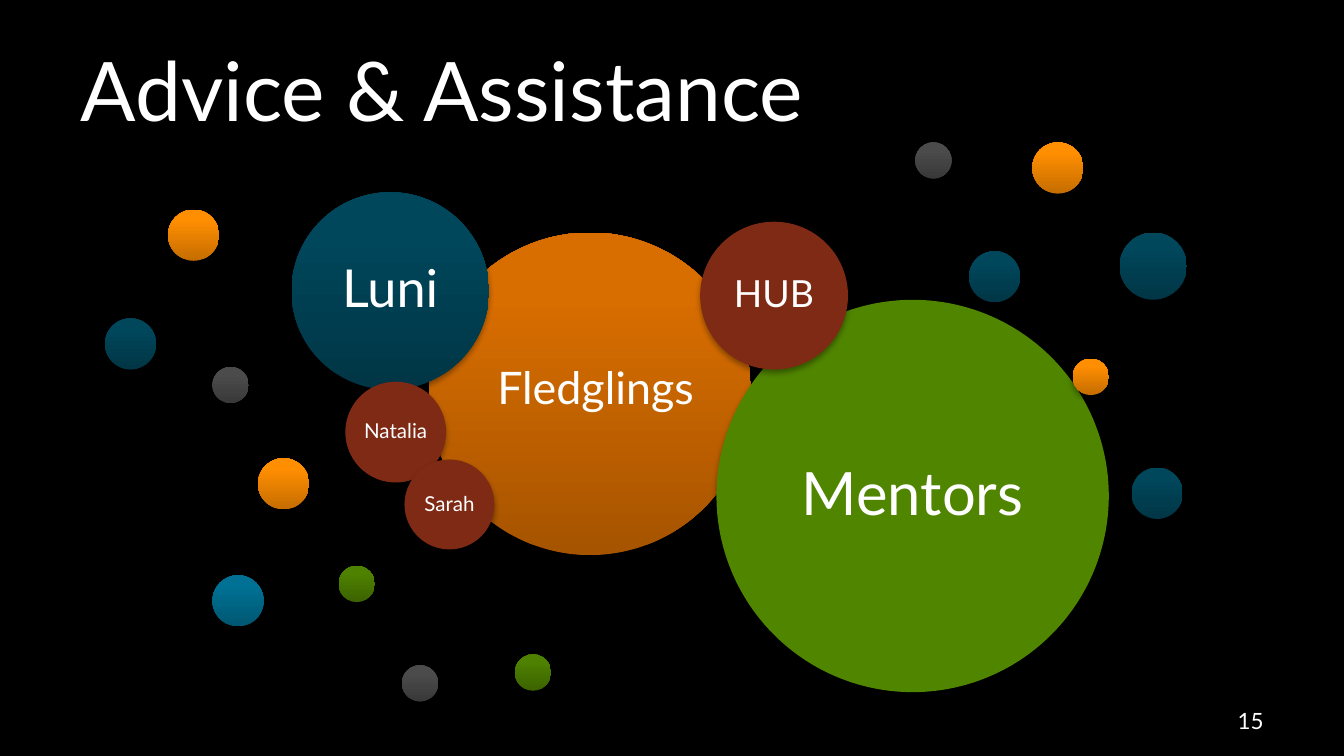
from lxml import etree
from pptx import Presentation
from pptx.dml.color import RGBColor
from pptx.enum.shapes import MSO_SHAPE
from pptx.enum.text import MSO_ANCHOR, PP_ALIGN
from pptx.oxml.ns import qn
from pptx.util import Pt

OVAL = MSO_SHAPE.OVAL
MIDDLE = MSO_ANCHOR.MIDDLE
LEFT, CENTER, RIGHT = PP_ALIGN.LEFT, PP_ALIGN.CENTER, PP_ALIGN.RIGHT

FONT = "Lato"
BLACK = RGBColor(0x00, 0x00, 0x00)
WHITE = RGBColor(0xFF, 0xFF, 0xFF)
RUST = RGBColor(0x7E, 0x2A, 0x15)
LEAF = RGBColor(0x50, 0x85, 0x00)
PUMPKIN = (RGBColor(0xA6, 0x54, 0x00), RGBColor(0xD8, 0x6D, 0x00))
GREEN = (RGBColor(0x3C, 0x63, 0x00), RGBColor(0x4E, 0x81, 0x00))
ORANGE = (RGBColor(0xC5, 0x6D, 0x00), RGBColor(0xFF, 0x8E, 0x01))
NAVY = (RGBColor(0x00, 0x36, 0x46), RGBColor(0x00, 0x47, 0x5B))
BLUE = (RGBColor(0x00, 0x57, 0x72), RGBColor(0x00, 0x71, 0x94))
GREY = (RGBColor(0x39, 0x39, 0x39), RGBColor(0x4B, 0x4B, 0x4B))

SMALL, MEDIUM, LARGE = 19.5, 27.4, 36

# label, left, top, diameter, fill, text size, left inset, bottom inset
BUBBLES = [
    ("Fledglings", 173.7, 48.6, 172.8, PUMPKIN, 24, 6, 4),
    ("Luni", 100.2, 27, 105.8, NAVY, 28, 0, 0),
    ("Mentors", 327.8, 84.6, 210.2, LEAF, 32, 0, 0),
    ("HUB", 319.1, 42.8, 79.2, RUST, 20, 0, 0),
    ("Natalia", 129, 128.5, 54, RUST, 11, 0, 0),
    ("Sarah", 160.7, 170.2, 48.2, RUST, 11, 0, 0),
]

# fill, diameter, positions
DOTS = [
    (GREEN, SMALL, [(219.8, 274.6), (125.4, 227.1)]),
    (GREY, SMALL, [(159.3, 280.4), (434.3, 0.3), (57.8, 120.6)]),
    (ORANGE, SMALL, [(518.6, 116.2)]),
    (ORANGE, MEDIUM, [(82.2, 169.5), (497, 0.3), (34, 36.3)]),
    (NAVY, MEDIUM, [(550.2, 174.6), (463.1, 58.6), (0.2, 94.6)]),
    (NAVY, LARGE, [(543.8, 48.6)]),
    (BLUE, MEDIUM, [(57.8, 232.2)]),
]


def style_text(tf, text, size, align):
    tf.text = text
    tf.vertical_anchor = MIDDLE
    p = tf.paragraphs[0]
    p.alignment = align
    font = p.runs[0].font
    font.name = FONT
    font.size = Pt(size)
    font.color.rgb = WHITE


def add_shadow(sp):
    sp.shadow.inherit = False
    effects = sp._element.spPr.find(qn("a:effectLst"))
    shadow = etree.SubElement(effects, qn("a:outerShdw"), blurRad=str(Pt(3.1)),
                              dist=str(Pt(1.8)), dir="5400000", rotWithShape="0")
    color = etree.SubElement(shadow, qn("a:srgbClr"), val=str(BLACK))
    etree.SubElement(color, qn("a:alpha"), val="35000")


def add_circle(s, left, top, diameter, fill):
    sp = s.shapes.add_shape(OVAL, Pt(left), Pt(top), Pt(diameter), Pt(diameter))
    if isinstance(fill, RGBColor):
        sp.fill.solid()
        sp.fill.fore_color.rgb = fill
    else:
        sp.fill.gradient()
        sp.fill.gradient_angle = 90
        for stop, color, position in zip(sp.fill.gradient_stops, fill, (0, 0.8)):
            stop.color.rgb = color
            stop.position = position
    sp.line.fill.background()
    add_shadow(sp)
    return sp


def add_title(s, left, top, width, height):
    title = s.shapes.title
    title.left, title.top = Pt(left), Pt(top)
    title.width, title.height = Pt(width), Pt(height)
    style_text(title.text_frame, "Advice & Assistance", 44, LEFT)


def add_bubbles(s, left, top):
    for label, x, y, diameter, fill, size, inset_left, inset_bottom in BUBBLES:
        sp = add_circle(s, left + x, top + y, diameter, fill)
        tf = sp.text_frame
        tf.word_wrap = False
        tf.margin_left, tf.margin_bottom = Pt(inset_left), Pt(inset_bottom)
        tf.margin_right = tf.margin_top = 0
        style_text(tf, label, size, CENTER)
        tf.paragraphs[0].line_spacing = 0.9


def add_dots(s, left, top):
    for fill, diameter, positions in DOTS:
        for x, y in positions:
            add_circle(s, left + x, top + y, diameter, fill)


def add_page_number(s, left, top, width, height):
    box = s.shapes.add_textbox(Pt(left), Pt(top), Pt(width), Pt(height))
    box.text_frame.word_wrap = True
    style_text(box.text_frame, "15", 12, RIGHT)


def main():
    prs = Presentation()
    prs.slide_width, prs.slide_height = Pt(720), Pt(405)
    s = prs.slides.add_slide(prs.slide_layouts[5])
    s.background.fill.solid()
    s.background.fill.fore_color.rgb = BLACK
    add_title(s, 36, 13.5, 648, 67.5)
    add_bubbles(s, 56, 76)
    add_dots(s, 56, 76)
    add_page_number(s, 516, 375, 168, 21.6)
    prs.save("out.pptx")


if __name__ == "__main__":
    main()
